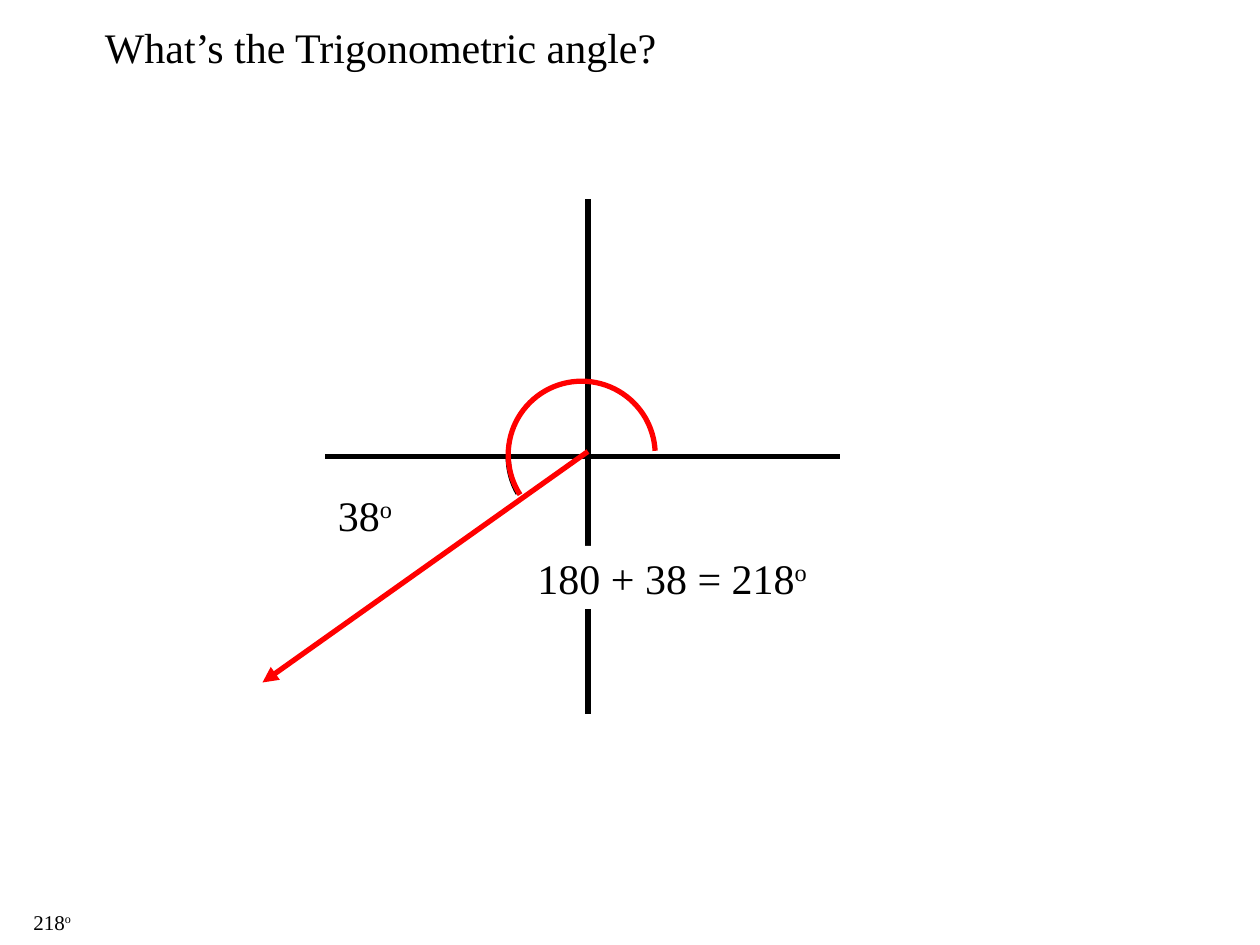
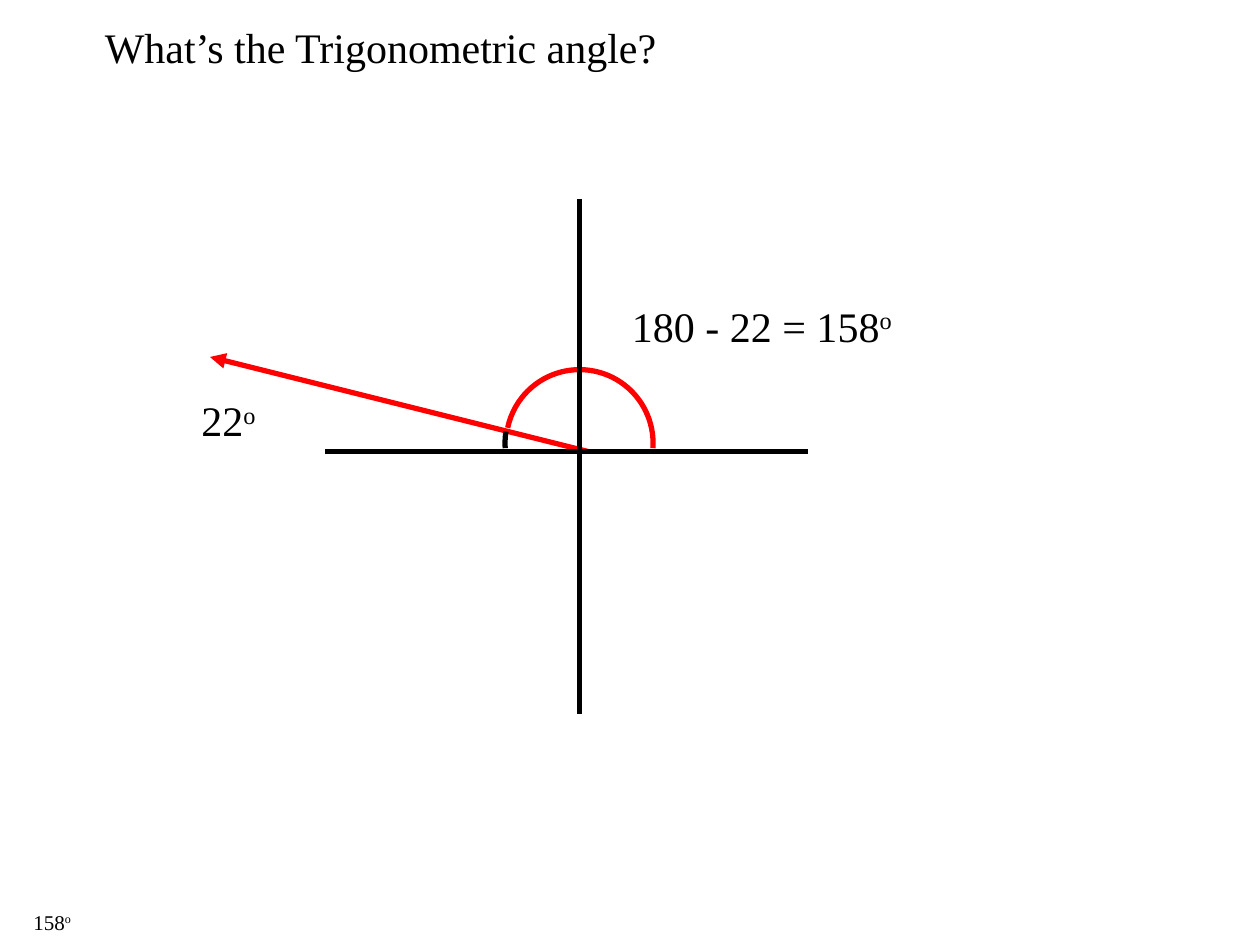
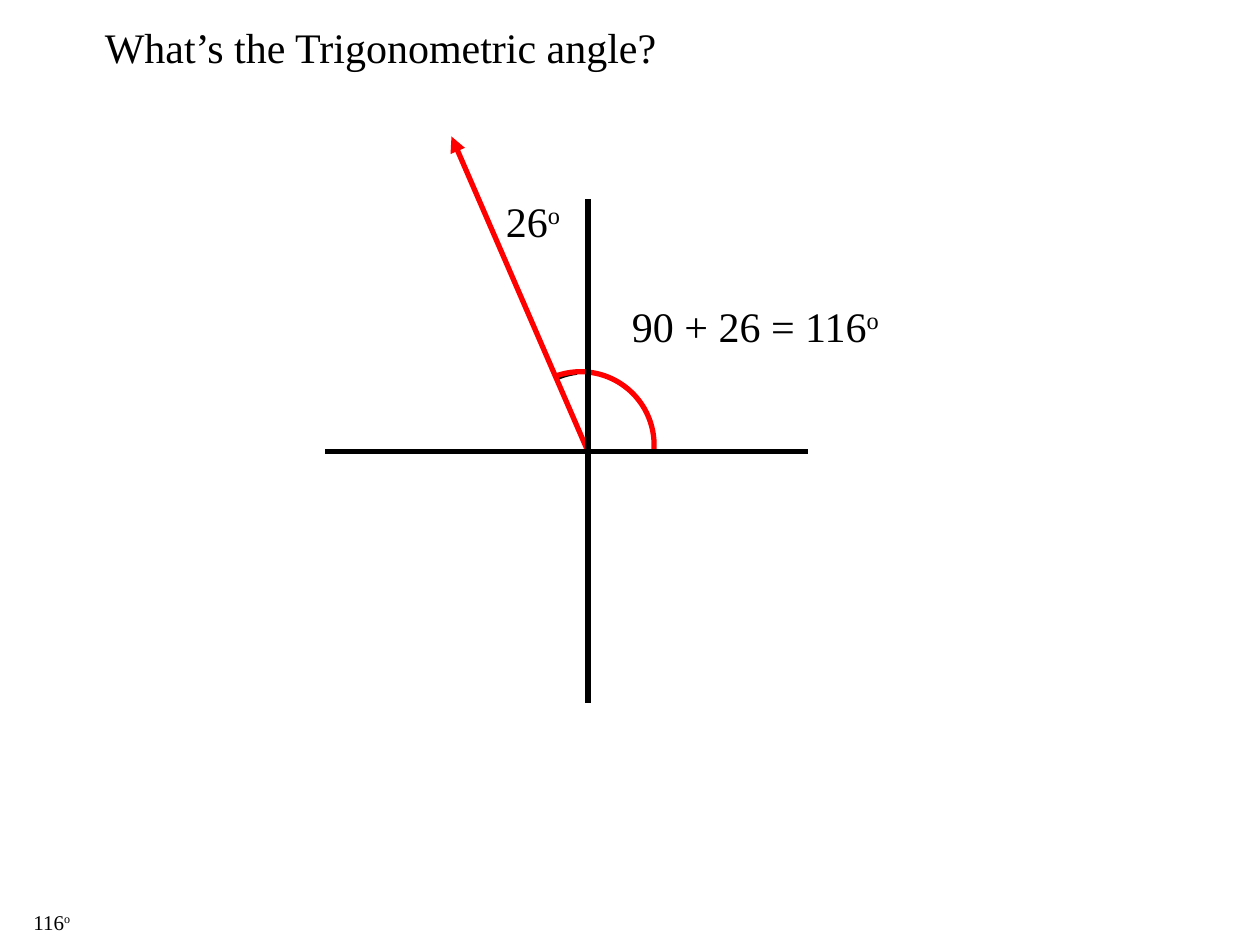
"""Build three slides that ask for the trigonometric angle of a ray."""
from lxml import etree
from pptx import Presentation
from pptx.dml.color import RGBColor
from pptx.enum.shapes import MSO_CONNECTOR, MSO_SHAPE
from pptx.enum.text import MSO_AUTO_SIZE
from pptx.oxml.ns import qn
from pptx.util import Inches, Pt

BLACK = RGBColor(0x00, 0x00, 0x00)
RED = RGBColor(0xFF, 0x00, 0x00)
WHITE = RGBColor(0xFF, 0xFF, 0xFF)
STRAIGHT = MSO_CONNECTOR.STRAIGHT
ARC = MSO_SHAPE.ARC
GROW = MSO_AUTO_SIZE.SHAPE_TO_FIT_TEXT

FONT = "Times New Roman"
BODY, SMALL = 24, 12
LINE_WIDTH = Pt(3)
COLS, ROWS = 120, 90
ORIGIN = (56, 43)
RADIUS = 7
ARC_UNITS_PER_DEGREE = 0.6


class AngleDeck:
    """Holds the style, the grid and the current slide."""

    def __init__(self):
        self.prs = Presentation()
        self.prs.slide_width, self.prs.slide_height = Inches(10), Inches(7.5)
        self.s = None

    def x(self, col):
        return round(self.prs.slide_width * col / COLS)

    def y(self, row):
        return round(self.prs.slide_height * row / ROWS)

    def new_slide(self, angle):
        self.s = self.prs.slides.add_slide(self.prs.slide_layouts[6])
        self.text(8.8, 1.5, 55.3, "What’s the Trigonometric angle?")
        self.degrees(2, 86, 6.1, angle, SMALL)

    def text(self, col, row, width, text, size=BODY):
        height = size / 4 if size == BODY else 3.6
        sp = self.s.shapes.add_textbox(
            self.x(col), self.y(row), self.x(width), self.y(height))
        tf = sp.text_frame
        tf.word_wrap = False
        tf.auto_size = GROW
        p = tf.paragraphs[0]
        p.text = text
        self.style(p.runs[0], size)
        return sp

    def style(self, r, size):
        r.font.name = FONT
        r.font.size = Pt(size)
        r.font.color.rgb = BLACK

    def degrees(self, col, row, width, text, size=BODY):
        sp = self.text(col, row, width, text, size)
        r = sp.text_frame.paragraphs[0].add_run()
        r.text = "o"
        self.style(r, size)
        r._r.get_or_add_rPr().set("baseline", "30000")
        return sp

    def stroke(self, sp, color):
        sp.line.color.rgb = color
        sp.line.width = LINE_WIDTH

    def line(self, start, end, color=BLACK):
        sp = self.s.shapes.add_connector(
            STRAIGHT, self.x(start[0]), self.y(start[1]),
            self.x(end[0]), self.y(end[1]))
        self.stroke(sp, color)
        etree.SubElement(sp._element.spPr, qn("a:effectLst"))
        return sp

    def ray(self, col, row):
        sp = self.line(ORIGIN, (col, row), RED)
        etree.SubElement(sp.line._ln, qn("a:tailEnd"), type="triangle")

    def arc(self, col, row, start, end, color=BLACK):
        sp = self.s.shapes.add_shape(
            ARC, self.x(col - RADIUS), self.y(row - RADIUS),
            self.x(2 * RADIUS), self.y(2 * RADIUS))
        sp.shadow.inherit = False
        sp.fill.background()
        self.stroke(sp, color)
        for i, angle in enumerate((start, end)):
            sp.adjustments[i] = angle * ARC_UNITS_PER_DEGREE


def third_quadrant(deck):
    """Ray 38 degrees below the negative horizontal axis."""
    deck.new_slide("218")
    deck.line((31, 43.5), (80, 43.5))
    deck.line((56, 19), (56, 68))
    deck.ray(25, 65)
    deck.arc(55.4, 43.5, 150, 180)
    deck.degrees(31, 46, 7.8, "38")
    answer = deck.degrees(50, 52, 28.2, "180 + 38 = 218")
    answer.fill.solid()
    answer.fill.fore_color.rgb = WHITE
    deck.arc(55.4, 43.3, 147, 357, RED)


def second_quadrant_low(deck):
    """Ray 22 degrees above the negative horizontal axis."""
    deck.new_slide("158")
    deck.ray(20, 34)
    deck.degrees(18, 37, 7.8, "22")
    deck.arc(55.1, 42.2, 176, 189)
    deck.degrees(59, 28, 27.4, "180 - 22 = 158")
    deck.arc(55.2, 42.2, 192, 4, RED)
    for col in (31, 77):
        deck.line(ORIGIN, (col, 43))
    deck.line((55.2, 19), (55.2, 68))


def second_quadrant_high(deck):
    """Ray 26 degrees to the left of the positive vertical axis."""
    deck.new_slide("116")
    deck.arc(55.8, 42.4, 248, 263)
    deck.ray(43, 13)
    deck.degrees(47, 18, 7.8, "26")
    deck.degrees(59, 28, 26.3, "90 + 26 = 116")
    deck.arc(55.3, 42.4, 250, 4, RED)
    for end in ((56, 19), (77, 43), (31, 43), (56, 67)):
        deck.line(ORIGIN, end)


def main():
    """Build and save the deck."""
    deck = AngleDeck()
    third_quadrant(deck)
    second_quadrant_low(deck)
    second_quadrant_high(deck)
    deck.prs.save("out.pptx")


if __name__ == "__main__":
    main()
